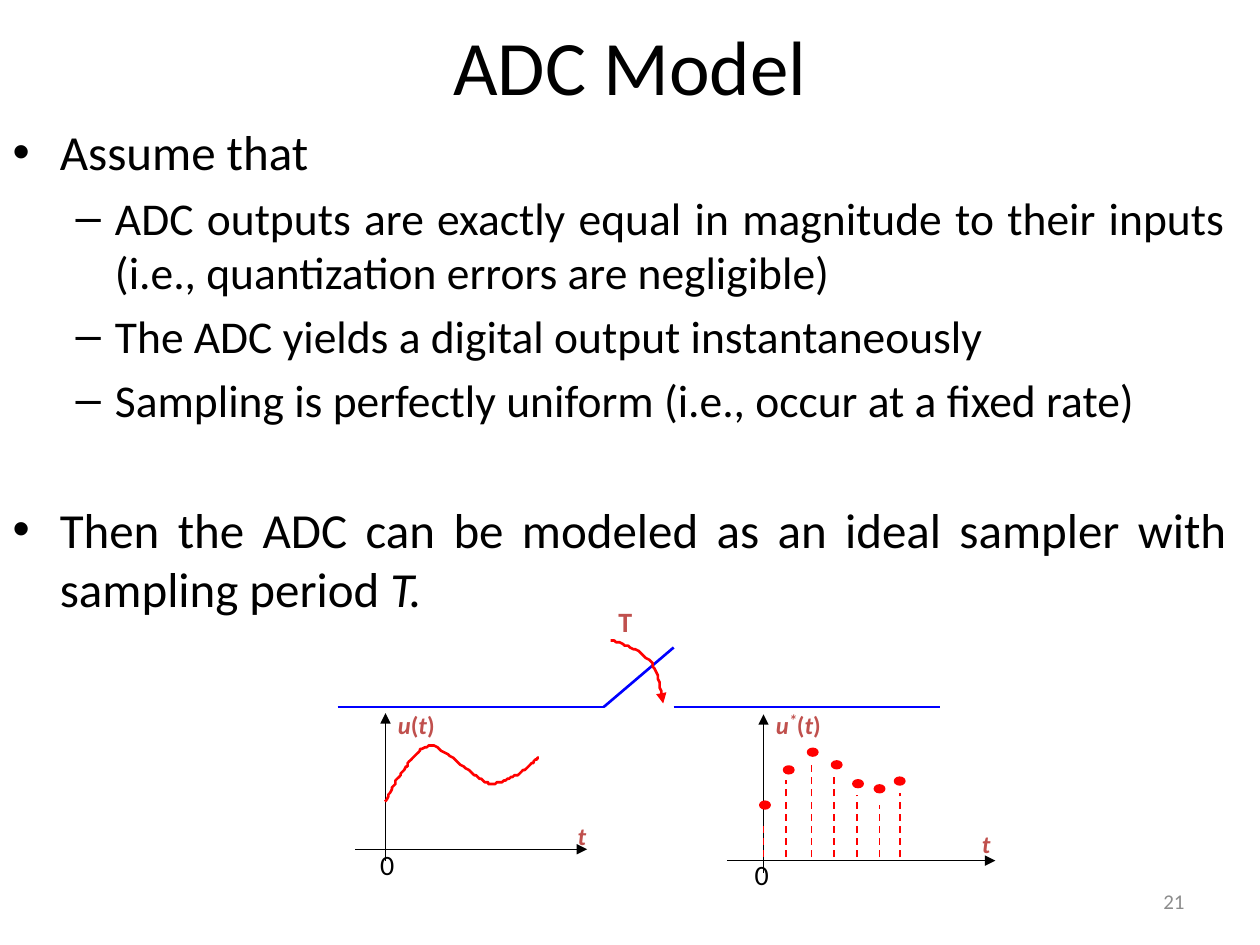
from lxml import etree
from pptx import Presentation
from pptx import util as u
from pptx.dml.color import RGBColor
from pptx.enum import dml, shapes, text
from pptx.oxml import ns

BLACK = RGBColor(0x00, 0x00, 0x00)
RED = RGBColor(0xFF, 0x00, 0x00)
BLUE = RGBColor(0x00, 0x00, 0xFF)
BRICK = RGBColor(0xC0, 0x50, 0x4D)
GRAY = RGBColor(0x8C, 0x8C, 0x8C)

SIGNAL = dict(size=14, color=BRICK, bold=True, italic=True)
UPRIGHT = dict(SIGNAL, italic=False)
STAR = dict(SIGNAL, size=16, baseline=30000)
ZERO = dict(size=16)


def bezier_points(start, segments, steps=16):
    """Points along a chain of cubic curves: (control, control, end) each."""
    points = [start]
    for b, c, d in segments:
        a = points[-1]
        for step in range(1, steps + 1):
            t = step / steps
            s = 1 - t
            points.append(tuple(
                s**3 * a[i] + 3 * s * s * t * b[i] + 3 * s * t * t * c[i] + t**3 * d[i]
                for i in (0, 1)))
    return points


class Sketch:
    """Holds the style and the current slide; all lengths are points."""

    font_name = "Calibri"

    def __init__(self, slide):
        self.slide = slide

    def place(self, shape, box):
        for name, value in zip(("left", "top", "width", "height"), box):
            setattr(shape, name, u.Pt(value))

    def run(self, paragraph, words, size, color=BLACK, baseline=None, **extra):
        run = paragraph.add_run()
        run.text = words
        values = dict(name=self.font_name, size=u.Pt(size), **extra)
        for name, value in values.items():
            setattr(run.font, name, value)
        run.font.color.rgb = color
        if baseline:
            run.font._element.set("baseline", str(baseline))

    def title(self, words, box):
        shape = self.slide.shapes.title
        self.place(shape, box)
        paragraph = shape.text_frame.paragraphs[0]
        paragraph.alignment = text.PP_ALIGN.CENTER
        self.run(paragraph, words, 44)

    def body(self, items, box):
        """Each item is level, space before or None, and its runs."""
        shape = self.slide.placeholders[1]
        self.place(shape, box)
        frame = shape.text_frame
        frame.auto_size = text.MSO_AUTO_SIZE.NONE
        for index, (level, space, runs) in enumerate(items):
            paragraph = frame.add_paragraph() if index else frame.paragraphs[0]
            values = dict(level=level, alignment=text.PP_ALIGN.JUSTIFY, space_before=space)
            for name, value in values.items():
                setattr(paragraph, name, value)
            for words, extra in runs:
                self.run(paragraph, words, 26 if level else 28, **extra)

    def label(self, runs, box, align=text.PP_ALIGN.LEFT, anchor=text.MSO_ANCHOR.TOP):
        frame = self.slide.shapes.add_textbox(*map(u.Pt, box)).text_frame
        for name, value in dict(word_wrap=True, vertical_anchor=anchor).items():
            setattr(frame, name, value)
        paragraph = frame.paragraphs[0]
        paragraph.alignment = align
        for words, style in runs:
            self.run(paragraph, words, **style)

    def stroke(self, shape, color, width, dashed=False, arrow=False):
        shape.line.color.rgb = color
        shape.line.width = u.Pt(width)
        if dashed:
            shape.line.dash_style = dml.MSO_LINE.DASH
        if arrow:
            line = shape.line._get_or_add_ln()
            etree.SubElement(line, ns.qn("a:tailEnd"), type="triangle")

    def line(self, start, end, color, width, **style):
        shape = self.slide.shapes.add_connector(
            shapes.MSO_CONNECTOR.STRAIGHT, *map(u.Pt, start + end))
        self.stroke(shape, color, width, **style)
        etree.SubElement(shape._element.spPr, ns.qn("a:effectLst"))

    def curve(self, start, segments, **style):
        first, *rest = bezier_points(start, segments)
        builder = self.slide.shapes.build_freeform(*first, scale=u.Pt(1))
        builder.add_line_segments(rest, close=False)
        shape = builder.convert_to_shape()
        shape.shadow.inherit = False
        shape.fill.background()
        self.stroke(shape, RED, 1.5, **style)

    def dot(self, left, top):
        shape = self.slide.shapes.add_shape(
            shapes.MSO_SHAPE.OVAL, *map(u.Pt, (left, top, 5.8, 4.3)))
        shape.shadow.inherit = False
        shape.fill.solid()
        shape.fill.fore_color.rgb = RED
        self.stroke(shape, RED, 1)

    def axes(self, origin_x, top, bottom, left, right, base):
        self.line((origin_x, bottom), (origin_x, top), BLACK, 0.75, arrow=True)
        self.line((left, base), (right, base), BLACK, 0.75, arrow=True)


def main():
    presentation = Presentation()
    presentation.slide_width, presentation.slide_height = u.Pt(720), u.Pt(540)
    slide = presentation.slides.add_slide(presentation.slide_layouts[1])
    sketch = Sketch(slide)

    # Title, list and page number
    sketch.title("ADC Model", (36, 6, 648, 62.5))
    sketch.body([
        (0, None, [("Assume that", {})]),
        (1, None, [("ADC outputs are exactly equal in magnitude to their inputs "
                    "(i.e., quantization errors are negligible)", {})]),
        (1, None, [("The ADC yields a digital output instantaneously", {})]),
        (1, None, [("Sampling is perfectly uniform (i.e., occur at a fixed rate)", {})]),
        (0, u.Pt(42), [("Then the ADC can be modeled as an ideal sampler with "
                        "sampling period ", {}), ("T.", dict(italic=True))]),
    ], (0, 66, 708, 356.5))
    sketch.label([("21", dict(size=12, color=GRAY))], (516, 500.5, 168, 28.8),
                 text.PP_ALIGN.RIGHT, text.MSO_ANCHOR.MIDDLE)

    # Sampling switch
    for start, end in (((193, 404), (345, 404)), ((385, 404), (537, 404)),
                       ((385, 370), (345, 404))):
        sketch.line(start, end, BLUE, 1.5)
    sketch.curve((349.2, 365.8), [
        ((357.8, 368.6), (366.5, 371.5), (371.5, 378)),
        ((377.3, 384.5), (378, 398.9), (379.4, 402.5))], arrow=True)
    sketch.label([("T", dict(size=16, color=BRICK, bold=True))], (346.3, 342, 59, 36))

    # Sampled signal
    sketch.axes(436.3, 408.2, 499, 415.4, 568.8, 491.8)
    samples = [  # dot left, dot top, stem x, stem top
        (434.2, 457.9, 436.3, 471.6), (447.8, 437.8, 449.3, 445.7),
        (461.5, 427.7, 463.7, 434.9), (475.2, 434.9, 476.6, 444.2),
        (487.4, 445.7, 489.6, 454.3), (499.7, 448.6, 502.6, 460.1),
        (511.2, 444.2, 514.1, 452.9)]
    for left, top, stem, stem_top in samples:
        sketch.line((stem, 489.8), (stem, stem_top), RED, 1, dashed=True)
        sketch.dot(left, top)

    # Continuous signal
    sketch.axes(220.3, 407.5, 491.8, 203, 335.5, 485.3)
    sketch.curve((220.3, 457.9), [
        ((223.9, 450.7), (227.5, 444.2), (231.8, 438.5)),
        ((236.2, 433.4), (240.5, 425.5), (247, 426.2)),
        ((253.4, 427), (264.2, 438.5), (270, 442.1)),
        ((275.8, 445.7), (277.2, 447.8), (281.5, 447.8)),
        ((285.8, 447.8), (292.3, 444.2), (296.6, 442.1)),
        ((301, 439.2), (306, 434.2), (308.2, 432.7))])

    # Axis labels
    argument = [("(", UPRIGHT), ("t", SIGNAL), (")", UPRIGHT)]
    sketch.label([("u", SIGNAL)] + argument, (220.3, 402, 45, 27))
    sketch.label([("u", SIGNAL), ("*", STAR)] + argument, (436.3, 400.3, 50, 27))
    for left, top in ((323, 465.8), (554, 470.2)):
        sketch.label([("t", SIGNAL)], (left, top, 34, 34))
    for left, top in ((210.2, 481), (424.1, 486.7)):
        sketch.label([("0", ZERO)], (left, top, 38, 37))

    presentation.save("out.pptx")


if __name__ == "__main__":
    main()
